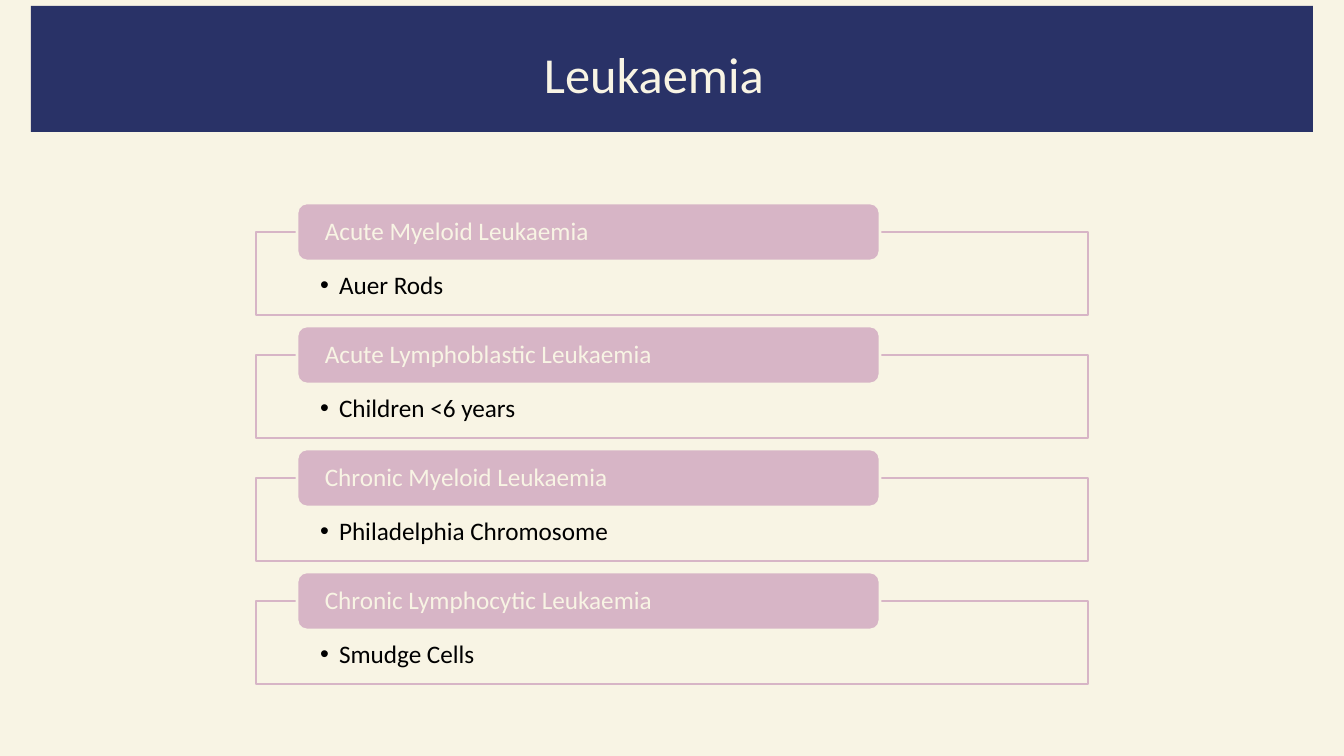
from lxml import etree
from pptx import Presentation
from pptx.dml.color import RGBColor
from pptx.enum.shapes import MSO_SHAPE
from pptx.enum.text import MSO_ANCHOR, MSO_AUTO_SIZE, PP_ALIGN
from pptx.oxml.ns import qn
from pptx.util import Emu, Pt

RECTANGLE, ROUNDED = MSO_SHAPE.RECTANGLE, MSO_SHAPE.ROUNDED_RECTANGLE
TOP, MIDDLE = MSO_ANCHOR.TOP, MSO_ANCHOR.MIDDLE
LEFT, CENTER = PP_ALIGN.LEFT, PP_ALIGN.CENTER
FIT_SHAPE = MSO_AUTO_SIZE.SHAPE_TO_FIT_TEXT

THEME = {
    "cream": RGBColor.from_string("F8F4E4"),
    "navy": RGBColor.from_string("293267"),
    "pink": RGBColor.from_string("D7B5C6"),
    "black": RGBColor.from_string("000000"),
    "font": "Calibri",
    "title_size": Pt(36),
    "body_size": Pt(18),
    "line_width": Pt(2),
}
SLIDE_WIDTH, SLIDE_HEIGHT = 1344, 756
SCALE = 12192000 / SLIDE_WIDTH
FIRST_TOP, ROW_STEP = 203, 123
DETAIL_OFFSET = 29
LEUKAEMIAS = [
    ("Acute Myeloid Leukaemia", "Auer Rods"),
    ("Acute Lymphoblastic Leukaemia", "Children <6 years"),
    ("Chronic Myeloid Leukaemia", "Philadelphia Chromosome"),
    ("Chronic Lymphocytic Leukaemia", "Smudge Cells"),
]


def add_box(preset, box, fill, line=None):
    shape = slide.shapes.add_shape(preset, *[Emu(round(n * SCALE)) for n in box])
    shape.shadow.inherit = False
    shape.fill.solid()
    shape.fill.fore_color.rgb = THEME[fill]
    if line:
        shape.line.color.rgb = THEME[line]
        shape.line.width = THEME["line_width"]
    else:
        shape.line.fill.background()
    return shape


def write_text(shape, text, color, size, insets, anchor, alignment, spacing):
    frame = shape.text_frame
    frame_format = {"word_wrap": True, "vertical_anchor": anchor}
    for side, inset in zip(("left", "top", "right", "bottom"), insets):
        frame_format[f"margin_{side}"] = Emu(round(inset * SCALE))
    for name, value in frame_format.items():
        setattr(frame, name, value)
    paragraph = frame.paragraphs[0]
    paragraph.alignment = alignment
    paragraph.line_spacing = spacing
    run = paragraph.add_run()
    run.text = text
    for name, value in {"name": THEME["font"], "size": THEME[size]}.items():
        setattr(run.font, name, value)
    run.font.color.rgb = THEME[color]
    return paragraph


presentation = Presentation()
presentation.slide_width = Emu(round(SLIDE_WIDTH * SCALE))
presentation.slide_height = Emu(round(SLIDE_HEIGHT * SCALE))
slide = presentation.slides.add_slide(presentation.slide_layouts[5])
slide.background.fill.solid()
slide.background.fill.fore_color.rgb = THEME["cream"]

banner = add_box(RECTANGLE, (31, 6, 1282, 126), "navy")
title = slide.shapes.title
title.element.addprevious(banner.element)
for name, length in {"left": 306, "top": 38, "width": 696, "height": 72}.items():
    setattr(title, name, Emu(round(length * SCALE)))
write_text(title, "Leukaemia", "cream", "title_size", (10, 5, 10, 5), TOP, CENTER, 1.0)
title.text_frame.auto_size = FIT_SHAPE

for row, (disease, feature) in enumerate(LEUKAEMIAS):
    top = FIRST_TOP + row * ROW_STEP
    detail = add_box(RECTANGLE, (256, top + DETAIL_OFFSET, 832, 83), "cream", "pink")
    color = detail.fill._xPr.find(qn("a:solidFill"))[0]
    etree.SubElement(color, qn("a:alpha"), val="90000")
    paragraph = write_text(
        detail, feature, "black", "body_size", (64, 41, 64, 14), TOP, LEFT, 0.9
    )
    paragraph.level = 1
    properties = paragraph._p.get_or_add_pPr()
    indent = round(19 * SCALE)
    properties.set("marL", str(indent))
    properties.set("indent", str(-indent))
    etree.SubElement(properties, qn("a:buFont"), typeface="Arial")
    etree.SubElement(properties, qn("a:buChar"), char="•")

    heading = add_box(ROUNDED, (297, top, 583, 58), "pink", "cream")
    write_text(heading, disease, "cream", "body_size", (25, 3, 25, 3), MIDDLE, LEFT, 0.9)

presentation.save("out.pptx")
